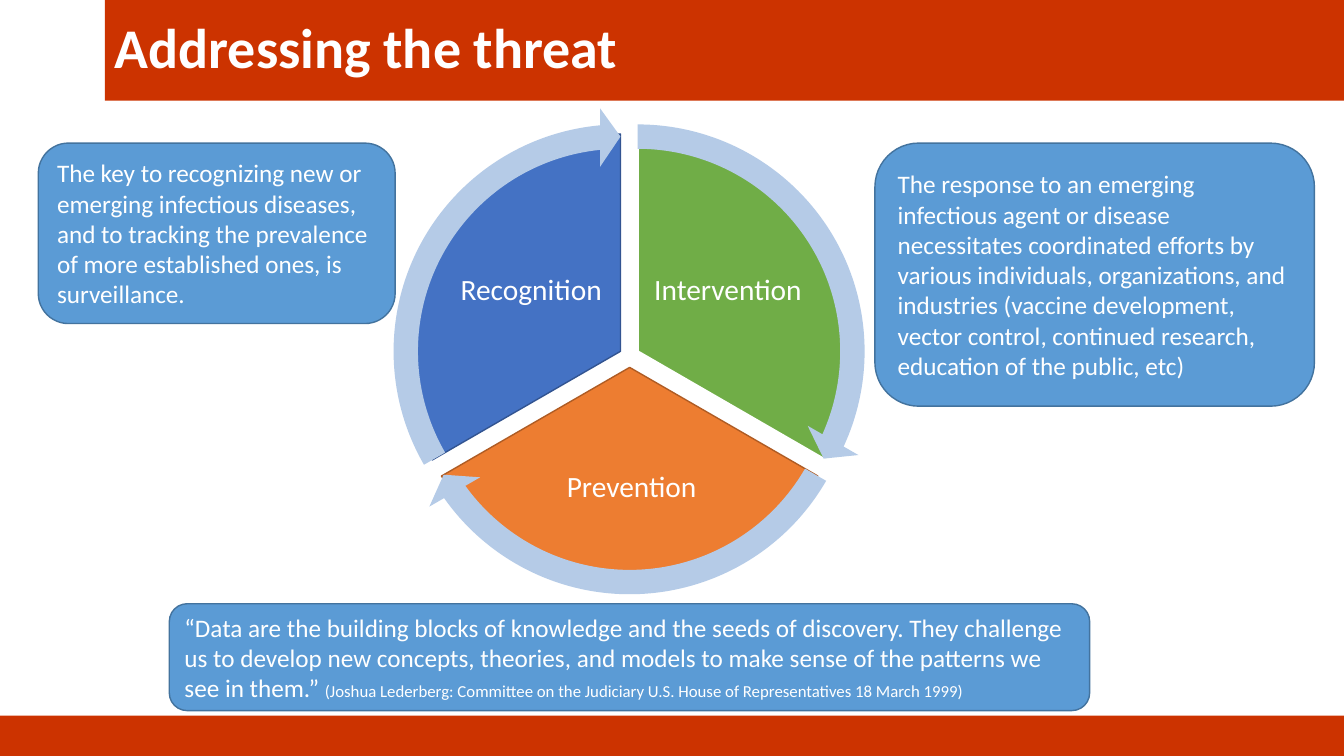
"""Build the 'Addressing the threat' slide with its three-part cycle."""
from pptx import Presentation
from pptx.dml.color import RGBColor
from pptx.enum.shapes import MSO_SHAPE
from pptx.enum.text import MSO_ANCHOR, PP_ALIGN
from pptx.util import Inches, Pt

RECTANGLE = MSO_SHAPE.RECTANGLE
ROUNDED = MSO_SHAPE.ROUNDED_RECTANGLE
PIE = MSO_SHAPE.PIE
CIRCULAR_ARROW = MSO_SHAPE.CIRCULAR_ARROW
MIDDLE = MSO_ANCHOR.MIDDLE
LEFT, CENTER = PP_ALIGN.LEFT, PP_ALIGN.CENTER

COLORS = {
    "band": "CC3300", "white": "FFFFFF",
    "green": "70AD47", "orange": "ED7D31", "orange edge": "AF5C24",
    "blue": "4472C4", "blue edge": "325491", "arrow": "B5CBE7",
    "callout": "5B9BD5", "callout edge": "43739E",
}

deck = Presentation()
deck.slide_width, deck.slide_height = Inches(13.33), Inches(7.5)
COLUMN, ROW = deck.slide_width / 100, deck.slide_height / 100
page = deck.slides.add_slide(deck.slide_layouts[6])


def add_box(kind, left, top, width, height, fill, edge=None, weight=1):
    box = page.shapes.add_shape(kind, int(left * COLUMN), int(top * ROW),
                                int(width * COLUMN), int(height * ROW))
    box.shadow.inherit = False
    box.fill.solid()
    box.fill.fore_color.rgb = RGBColor.from_string(COLORS[fill])
    if edge:
        box.line.color.rgb = RGBColor.from_string(COLORS[edge])
        box.line.width = Pt(weight)
    else:
        box.line.fill.background()
    return box


def write(box, runs, align=LEFT, spacing=1.0, bold=False):
    frame = box.text_frame
    frame.word_wrap = True
    frame.vertical_anchor = MIDDLE
    para = frame.paragraphs[0]
    para.alignment = align
    para.line_spacing = spacing
    for text, size in runs:
        span = para.add_run()
        span.text = text
        span.font.name = "Calibri"
        span.font.size = Pt(size)
        span.font.bold = bold
        span.font.color.rgb = RGBColor.from_string(COLORS["white"])


add_box(RECTANGLE, 0, 94.67, 100, 5.33, "band")
title = add_box(RECTANGLE, 7.8, 0, 92.2, 13.33, "band")
write(title, [("Addressing the threat", 40)], spacing=0.9, bold=True)

# Angles are in units of 5/3 degree, the scale of shape adjustments.
THIRD, FULL_TURN, ARROW_TIP = 72, 216, 3.28
PIE_SIZE, ARROW_SIZE = 4.31, 4.84
stages = [
    ("Intervention", 47.45, 46.47, 18, "green", "white", 1.5, (48.38, 30, 11.55, 17.07)),
    ("Prevention", 46.85, 48.6, 90, "orange", "orange edge", 1, (38.33, 57.07, 17.33, 15.07)),
    ("Recognition", 46.17, 46.47, 162, "blue", "blue edge", 1, (33.75, 30, 11.55, 17.07)),
]


def circle_bounds(center_x, center_y, diameter):
    width, height = Inches(diameter) / COLUMN, Inches(diameter) / ROW
    return center_x - width / 2, center_y - height / 2, width, height


for name, x, y, end, fill, edge, weight, (left, top, width, height) in stages:
    wedge = add_box(PIE, *circle_bounds(x, y, PIE_SIZE), fill, edge, weight)
    wedge.adjustments[0] = (end - THIRD) % FULL_TURN
    wedge.adjustments[1] = end
    label = page.shapes.add_textbox(int(left * COLUMN), int(top * ROW),
                                    int(width * COLUMN), int(height * ROW))
    frame = label.text_frame
    frame.margin_left = frame.margin_right = Inches(0.03)
    frame.margin_top = frame.margin_bottom = Inches(0.03)
    write(label, [(name, 21)], CENTER, 0.9)

for name, x, y, end, *style in stages:
    arrow = add_box(CIRCULAR_ARROW, *circle_bounds(x, y, ARROW_SIZE), "arrow")
    start = (end - THIRD) % FULL_TURN
    for index, value in enumerate([0.05, ARROW_TIP, end - ARROW_TIP, start, 0.06]):
        arrow.adjustments[index] = value

callouts = [
    ((2.85, 18.93, 26.55, 23.87), [
        ("The key to recognizing new or emerging infectious diseases, and to "
         "tracking the prevalence of more established ones, is surveillance.", 18)]),
    ((65.1, 18.93, 32.7, 34.8), [
        ("The response to an emerging infectious agent or disease necessitates "
         "coordinated efforts by various individuals, organizations, and industries "
         "(vaccine development, vector control, continued research, education of "
         "the public, etc)", 18)]),
    ((12.6, 79.87, 68.48, 14.13), [
        ("“Data are the building blocks of knowledge and the seeds of discovery. "
         "They challenge us to develop new concepts, theories, and models to make "
         "sense of the patterns we see in them.” ", 18),
        ("(Joshua Lederberg: Committee on the Judiciary U.S. House of "
         "Representatives 18 March 1999)", 12)]),
]
for bounds, runs in callouts:
    write(add_box(ROUNDED, *bounds, "callout", "callout edge"), runs)

deck.save("out.pptx")
